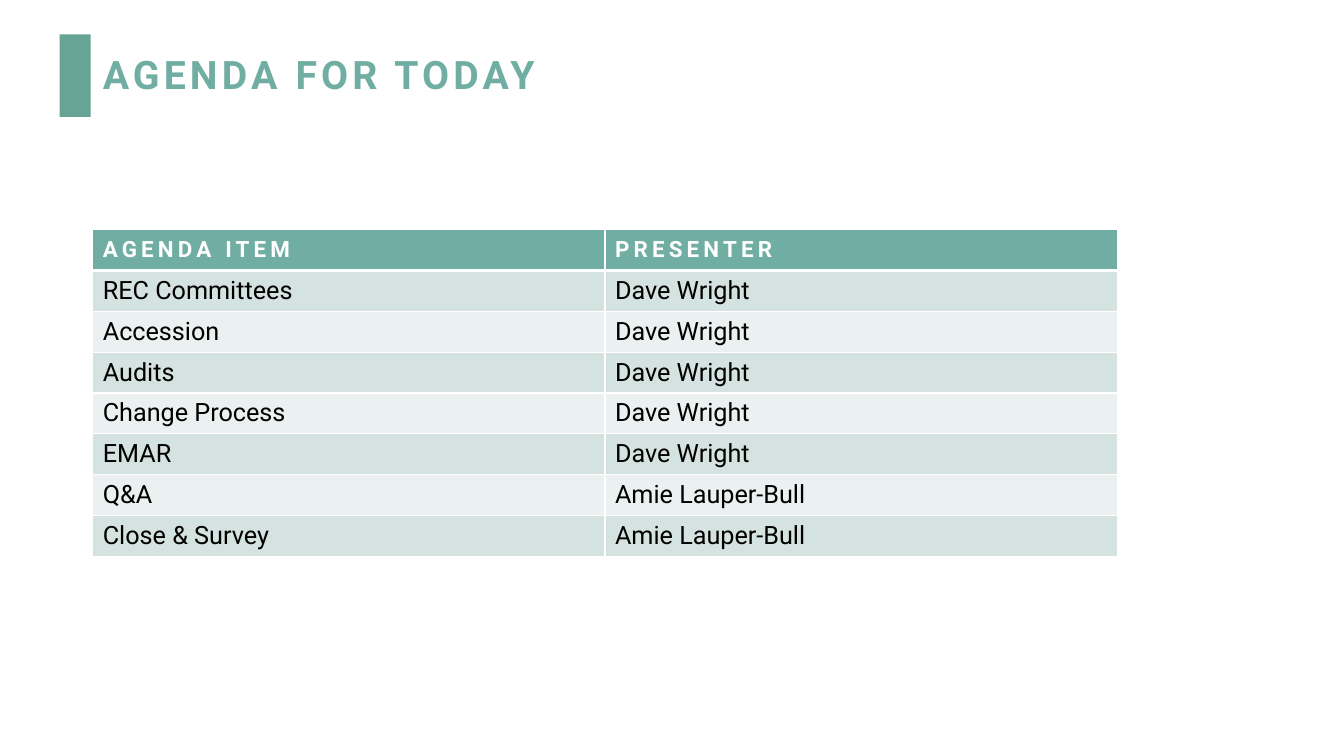
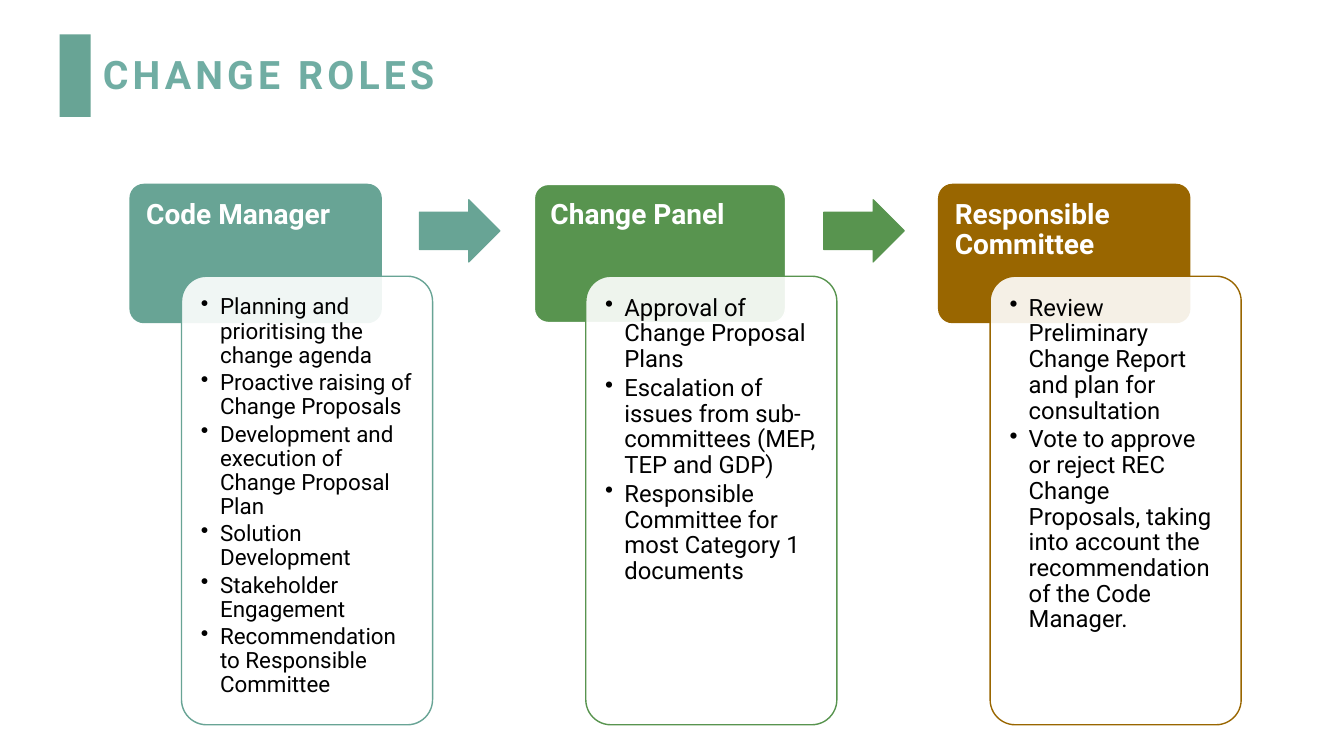
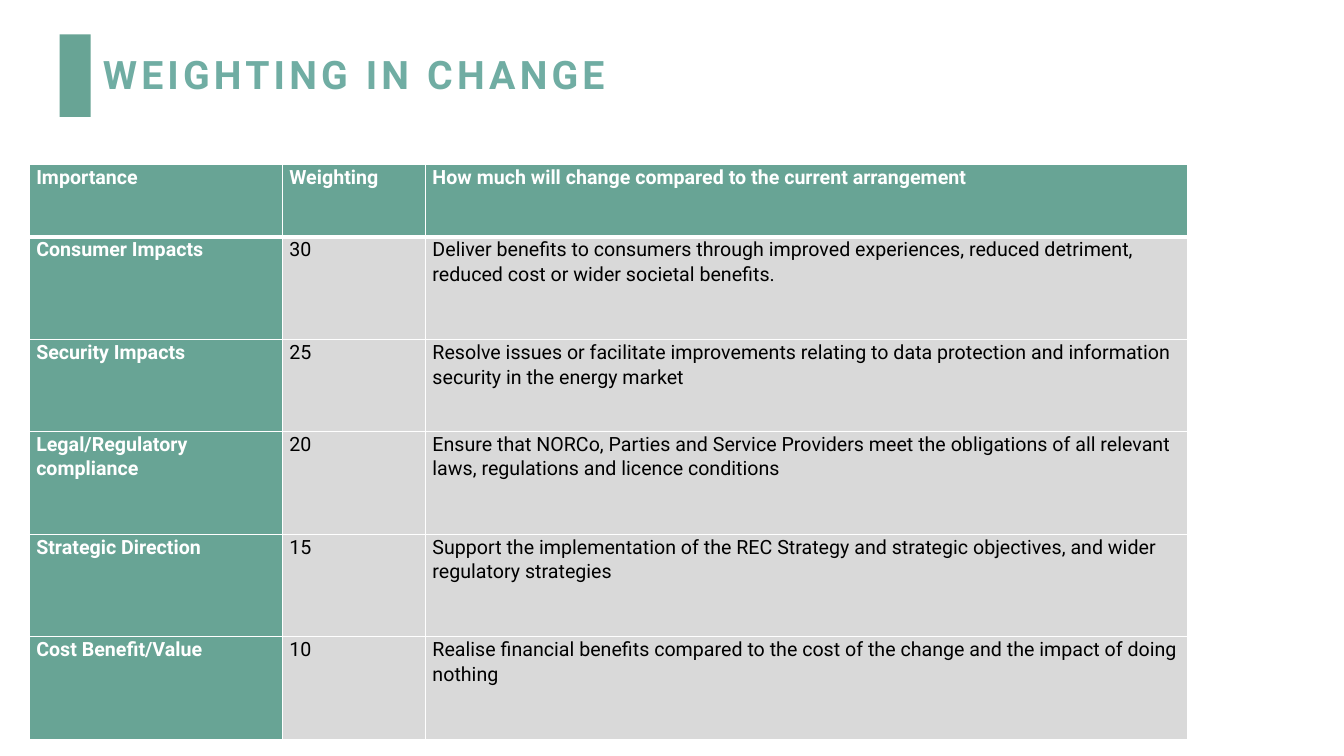
from dataclasses import dataclass
from lxml.etree import SubElement
from pptx import Presentation
from pptx.dml.color import RGBColor
from pptx.enum.shapes import MSO_SHAPE as Preset
from pptx.enum.text import MSO_ANCHOR as Anchor, MSO_AUTO_SIZE as AutoSize, PP_ALIGN as Align
from pptx.oxml import parse_xml
from pptx.oxml.ns import nsdecls, qn
from pptx.util import Inches, Pt


@dataclass(frozen=True)
class Theme:
    font: str = "Roboto"
    title: str = "70ADA3"
    teal: str = "68A495"
    green: str = "58944F"
    brown: str = "996600"
    band_dark: str = "D5E3E0"
    band_light: str = "EBF1F0"
    grey: str = "D9D9D9"
    white: str = "FFFFFF"
    black: str = "000000"
    title_size: int = 28
    heading_size: int = 20
    duty_size: int = 17
    duty_size_small: int = 16
    agenda_size: int = 18
    agenda_header_size: int = 16
    weighting_size: int = 14


@dataclass(frozen=True)
class TextStyle:
    size: int
    color: str
    bold: bool = False
    tracking: int = 0
    line_spacing: float = 1.0
    space_after: float = 0
    bullet: bool = False


THEME = Theme()


def apply_values(target, values):
    for name, value in values.items():
        setattr(target, name, value)


def margins(left, top, right, bottom):
    return {
        "margin_left": Inches(left),
        "margin_top": Inches(top),
        "margin_right": Inches(right),
        "margin_bottom": Inches(bottom),
    }


class Deck:
    def __init__(self, theme):
        self.theme = theme
        self.presentation = Presentation()
        apply_values(self.presentation,
                     {"slide_width": Inches(13.33), "slide_height": Inches(7.5)})
        self.slide = None

    def start(self, heading):
        self.slide = self.presentation.slides.add_slide(self.presentation.slide_layouts[5])
        self.shape(Preset.RECTANGLE, 0.59, 0.34, 0.31, 0.82, self.theme.teal)
        title = self.slide.shapes.title
        apply_values(title, {"left": Inches(0.92), "top": Inches(0.4),
                             "width": Inches(10.15), "height": Inches(0.72)})
        apply_values(title.text_frame, {"vertical_anchor": Anchor.MIDDLE, "word_wrap": True,
                                        "auto_size": AutoSize.NONE})
        self.add_text(title.text_frame, [heading],
                      TextStyle(self.theme.title_size, self.theme.title, bold=True,
                                tracking=3, line_spacing=0.9))

    def add_text(self, frame, lines, style):
        for index, line in enumerate(lines):
            paragraph = frame.add_paragraph() if index else frame.paragraphs[0]
            apply_values(paragraph, {
                "alignment": Align.LEFT, "line_spacing": style.line_spacing,
                "space_before": Pt(0), "space_after": Pt(style.space_after)})
            if style.bullet:
                properties = paragraph._p.get_or_add_pPr()
                properties.set("marL", str(Inches(0.19)))
                properties.set("indent", str(-Inches(0.19)))
                SubElement(properties, qn("a:buChar")).set("char", "•")
            run = paragraph.add_run()
            run.text = line
            apply_values(run.font, {"name": self.theme.font, "size": Pt(style.size),
                                    "bold": style.bold})
            run.font.color.rgb = RGBColor.from_string(style.color)
            if style.tracking:
                run._r.get_or_add_rPr().set("spc", str(style.tracking * 100))

    def shape(self, preset, left, top, width, height, fill, line=None,
              line_width=1, adjustments=(), opacity=100):
        shape = self.slide.shapes.add_shape(
            preset, Inches(left), Inches(top), Inches(width), Inches(height))
        shape.shadow.inherit = False
        for index, value in enumerate(adjustments):
            shape.adjustments[index] = value
        shape.fill.solid()
        shape.fill.fore_color.rgb = RGBColor.from_string(fill)
        if opacity < 100:
            color = shape._element.spPr.find(qn("a:solidFill")).find(qn("a:srgbClr"))
            SubElement(color, qn("a:alpha")).set("val", str(opacity * 1000))
        if line:
            shape.line.color.rgb = RGBColor.from_string(line)
            shape.line.width = Pt(line_width)
        else:
            shape.line.fill.background()
        return shape

    def card(self, left, top, width, height, lines, style, inset, **look):
        card = self.shape(Preset.ROUNDED_RECTANGLE, left, top, width, height,
                          adjustments=(0.1,), **look)
        apply_values(card.text_frame, {"vertical_anchor": Anchor.TOP, "word_wrap": True,
                                       **margins(inset, inset, inset, inset)})
        self.add_text(card.text_frame, lines, style)

    def arrow(self, left, top, width, height, color):
        self.shape(Preset.RIGHT_ARROW, left, top, width, height, color, color,
                   line_width=0.75, adjustments=(0.6, 0.5))

    def borders(self, cell, row):
        widths = {"L": 1, "R": 1, "T": 3 if row == 1 else 1, "B": 1 if row else 3}
        for index, (side, width) in enumerate(widths.items()):
            cell._tc.get_or_add_tcPr().insert(index, parse_xml(
                f'<a:ln{side} {nsdecls("a")} w="{Pt(width)}"><a:solidFill>'
                f'<a:srgbClr val="{self.theme.white}"/></a:solidFill></a:ln{side}>'))

    def table(self, left, top, widths, heights, rows, look, cell_format):
        table = self.slide.shapes.add_table(
            len(rows), len(widths), Inches(left), Inches(top),
            Inches(sum(widths)), Inches(sum(heights))).table
        for column, width in zip(table.columns, widths):
            column.width = Inches(width)
        for row, height in zip(table.rows, heights):
            row.height = Inches(height)
        for row, values in enumerate(rows):
            for column, value in enumerate(values):
                cell = table.cell(row, column)
                fill, style = look(row, column)
                apply_values(cell, cell_format)
                cell.fill.solid()
                cell.fill.fore_color.rgb = RGBColor.from_string(fill)
                self.borders(cell, row)
                self.add_text(cell.text_frame, [value], style)


def agenda(deck):
    theme = deck.theme
    header = TextStyle(theme.agenda_header_size, theme.white, bold=True, tracking=3)
    body = TextStyle(theme.agenda_size, theme.black)

    def look(row, column):
        if row == 0:
            return theme.title, header
        return (theme.band_dark if row % 2 else theme.band_light), body

    items = [
        ("AGENDA ITEM", "PRESENTER"),
        ("REC Committees", "Dave Wright"),
        ("Accession", "Dave Wright"),
        ("Audits", "Dave Wright"),
        ("Change Process", "Dave Wright"),
        ("EMAR", "Dave Wright"),
        ("Q&A", "Amie Lauper-Bull"),
        ("Close & Survey", "Amie Lauper-Bull"),
    ]
    deck.start("AGENDA FOR TODAY")
    deck.table(0.92, 2.28, [5.08] * 2, [3.24 / len(items)] * len(items), items, look,
               {"vertical_anchor": Anchor.MIDDLE})


def change_roles(deck):
    theme = deck.theme
    roles = [
        ("Code Manager", theme.teal, theme.teal, theme.duty_size_small, [
            "Planning and prioritising the change agenda",
            "Proactive raising of Change Proposals",
            "Development and execution of Change Proposal Plan",
            "Solution Development",
            "Stakeholder Engagement",
            "Recommendation to Responsible Committee",
        ]),
        ("Change Panel", theme.green, theme.white, theme.duty_size, [
            "Approval of Change Proposal Plans",
            "Escalation of issues from sub-committees (MEP, TEP and GDP)",
            "Responsible Committee for most Category 1 documents",
        ]),
        ("Responsible Committee", theme.brown, theme.brown, theme.duty_size, [
            "Review Preliminary Change Report and plan for consultation",
            "Vote to approve or reject REC Change Proposals, taking into account "
            "the recommendation of the Code Manager.",
        ]),
    ]
    heading = TextStyle(theme.heading_size, theme.white, bold=True, line_spacing=0.9)
    deck.start("CHANGE ROLES")
    for index, (role, color, outline, size, duties) in enumerate(roles):
        left = 1.29 + 4.01 * index
        duty = TextStyle(size, theme.black, line_spacing=0.9, space_after=2.2, bullet=True)
        deck.card(left, 1.83, 2.49, 1.37, [role], heading, 0.12, fill=color, line=outline)
        deck.card(left + 0.51, 2.74, 2.49, 4.45, duties, duty, 0.12,
                  fill=theme.white, line=color, opacity=90)
        if index < len(roles) - 1:
            deck.arrow(left + 2.87, 1.98, 0.8, 0.62, color)


def weighting(deck):
    theme = deck.theme
    spacing = {"line_spacing": 1.07, "space_after": 8}
    label = TextStyle(theme.weighting_size, theme.white, bold=True, **spacing)
    body = TextStyle(theme.weighting_size, theme.black, **spacing)

    def look(row, column):
        return (theme.grey, body) if row and column else (theme.teal, label)

    criteria = [
        ("Importance", "Weighting", "How much will change compared to the current arrangement"),
        ("Consumer Impacts", "30",
         "Deliver benefits to consumers through improved experiences, reduced detriment, "
         "reduced cost or wider societal benefits."),
        ("Security Impacts", "25",
         "Resolve issues or facilitate improvements relating to data protection and "
         "information security in the energy market"),
        ("Legal/Regulatory compliance", "20",
         "Ensure that NORCo, Parties and Service Providers meet the obligations of all "
         "relevant laws, regulations and licence conditions"),
        ("Strategic Direction", "15",
         "Support the implementation of the REC Strategy and strategic objectives, and "
         "wider regulatory strategies"),
        ("Cost Benefit/Value", "10",
         "Realise financial benefits compared to the cost of the change and the impact of "
         "doing nothing"),
    ]
    deck.start("WEIGHTING IN CHANGE")
    deck.table(0.29, 1.63, [2.51, 1.42, 7.56], [0.72, 1.02, 0.91, 1.02, 1.02, 1.02],
               criteria, look,
               {"vertical_anchor": Anchor.TOP, **margins(0.07, 0, 0.07, 0)})


def main():
    deck = Deck(THEME)
    for build in (agenda, change_roles, weighting):
        build(deck)
    deck.presentation.save("out.pptx")


if __name__ == "__main__":
    main()
